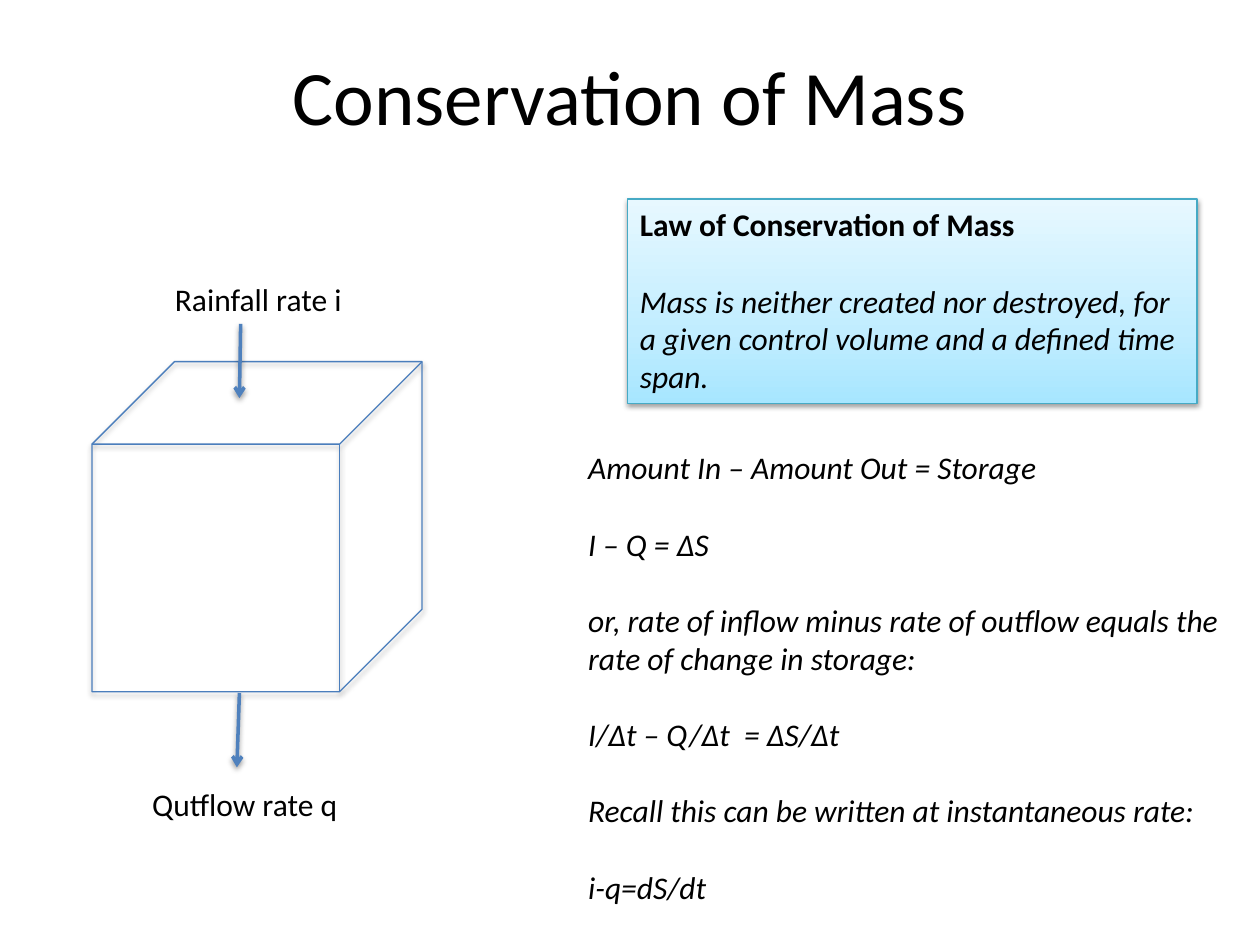
import lxml.etree
import pptx
import pptx.dml.color
import pptx.enum.shapes
import pptx.enum.text
import pptx.oxml
import pptx.oxml.ns
import pptx.util

Inches = pptx.util.Inches
Pt = pptx.util.Pt
SHAPES = pptx.enum.shapes.MSO_SHAPE
BLANK_LINE = 22  # points, the height of one 18 pt line


def colour(value):
    return pptx.dml.color.RGBColor.from_string(value)


class SlideBuilder:
    """Holds the style and the current slide."""

    font = "Calibri"
    text_colour = "000000"
    body_size = 18

    def __init__(self, page):
        self.page = page

    def add_xml(self, parent, tag, **attributes):
        element = lxml.etree.SubElement(parent, pptx.oxml.ns.qn(tag))
        for name, value in attributes.items():
            element.set(name, str(value))
        return element

    def span(self, para, text, size=None, bold=False, italic=False):
        span = para.add_run()
        span.text = text
        span.font.name = self.font
        span.font.size = Pt(size or self.body_size)
        span.font.bold = bold
        span.font.italic = italic
        span.font.color.rgb = colour(self.text_colour)

    def paragraphs(self, frame, lines):
        """Write (text, format) pairs, one blank line's height apart."""
        for index, (text, style) in enumerate(lines):
            para = frame.add_paragraph() if index else frame.paragraphs[0]
            para.alignment = pptx.enum.text.PP_ALIGN.LEFT
            para.space_before = Pt(BLANK_LINE if index else 0)
            self.span(para, text, **style)

    def title(self, text, left, top, width, height):
        box = self.page.shapes.title
        box.left, box.top = Inches(left), Inches(top)
        box.width, box.height = Inches(width), Inches(height)
        frame = box.text_frame
        frame.vertical_anchor = pptx.enum.text.MSO_ANCHOR.MIDDLE
        para = frame.paragraphs[0]
        para.alignment = pptx.enum.text.PP_ALIGN.CENTER
        self.span(para, text, size=44)

    def text(self, lines, left, top, width, height, wrap=True):
        box = self.page.shapes.add_textbox(
            Inches(left), Inches(top), Inches(width), Inches(height))
        box.text_frame.word_wrap = wrap
        self.paragraphs(box.text_frame, lines)

    def shadow(self, shape, opacity=38, distance=1.6):
        effects = self.add_xml(shape._element.spPr, "a:effectLst")
        shadow = self.add_xml(effects, "a:outerShdw", blurRad=Pt(3.1),
                              dist=Pt(distance), dir=90 * 60000, rotWithShape=0)
        shade = self.add_xml(shadow, "a:srgbClr", val="000000")
        self.add_xml(shade, "a:alpha", val=opacity * 1000)

    def shape(self, kind, left, top, width, height, line):
        shape = self.page.shapes.add_shape(
            kind, Inches(left), Inches(top), Inches(width), Inches(height))
        shape.fill.background()
        shape.line.color.rgb = colour(line)
        shape.line.width = Pt(0.75)
        return shape

    def gradient(self, shape, stops):
        """Fill from bottom to top with (percent, colour) stops."""
        shape.fill.gradient()
        shape.fill.gradient_angle = 90
        stop_list = shape._element.spPr.find(".//" + pptx.oxml.ns.qn("a:gsLst"))
        for old in list(stop_list):
            stop_list.remove(old)
        for percent, value in stops:
            stop = self.add_xml(stop_list, "a:gs", pos=percent * 1000)
            self.add_xml(stop, "a:srgbClr", val=value)

    def arrow(self, start, end):
        arrow = self.page.shapes.add_connector(
            pptx.enum.shapes.MSO_CONNECTOR.STRAIGHT,
            *(Inches(value) for value in start + end))
        arrow.line.color.rgb = colour("4F81BD")
        arrow.line.width = Pt(2)
        self.add_xml(arrow.line._get_or_add_ln(), "a:tailEnd", type="arrow")
        self.shadow(arrow)


def main():
    deck = pptx.Presentation()
    deck.slide_width, deck.slide_height = Inches(10), Inches(7.5)
    builder = SlideBuilder(deck.slides.add_slide(deck.slide_layouts[5]))
    builder.title("Conservation of Mass", 0.5, 0.13, 9, 1.25)

    # Control volume with inflow and outflow
    cube = builder.shape(SHAPES.CUBE, 0.73, 2.87, 2.62, 2.62, "4B7EBC")
    builder.shadow(cube, opacity=35, distance=1.8)
    builder.arrow((1.91, 2.57), (1.9, 3.16))
    builder.arrow((1.9, 5.5), (1.88, 6.09))

    # Statement of the law
    law = builder.shape(SHAPES.RECTANGLE, 4.98, 1.58, 4.52, 1.62, "46AAC5")
    builder.gradient(law, [(0, "A7E6FF"), (35, "C1EDFF"), (100, "E7F8FF")])
    builder.shadow(law)
    law.text_frame.word_wrap = True
    law.text_frame.vertical_anchor = pptx.enum.text.MSO_ANCHOR.TOP
    builder.paragraphs(law.text_frame, [
        ("Law of Conservation of Mass", {"bold": True}),
        ("Mass is neither created nor destroyed, for a given control volume "
         "and a defined time span.", {"italic": True}),
    ])

    # Derivation
    derivation = [
        "Amount In – Amount Out = Storage",
        "I – Q = ΔS",
        "or, rate of inflow minus rate of outflow equals the rate of change "
        "in storage:",
        "I/Δt – Q/Δt  = ΔS/Δt",
        "Recall this can be written at instantaneous rate:",
        "i-q=dS/dt",
    ]
    builder.text([(line, {"italic": True}) for line in derivation],
                 4.57, 3.51, 5.3, 3.74)

    # Flow labels
    builder.text([("Rainfall rate i", {})], 1.29, 2.17, 1.56, 0.4, wrap=False)
    builder.text([("Qutflow rate q", {})], 1.11, 6.18, 1.7, 0.4, wrap=False)

    deck.save("out.pptx")


if __name__ == "__main__":
    main()
